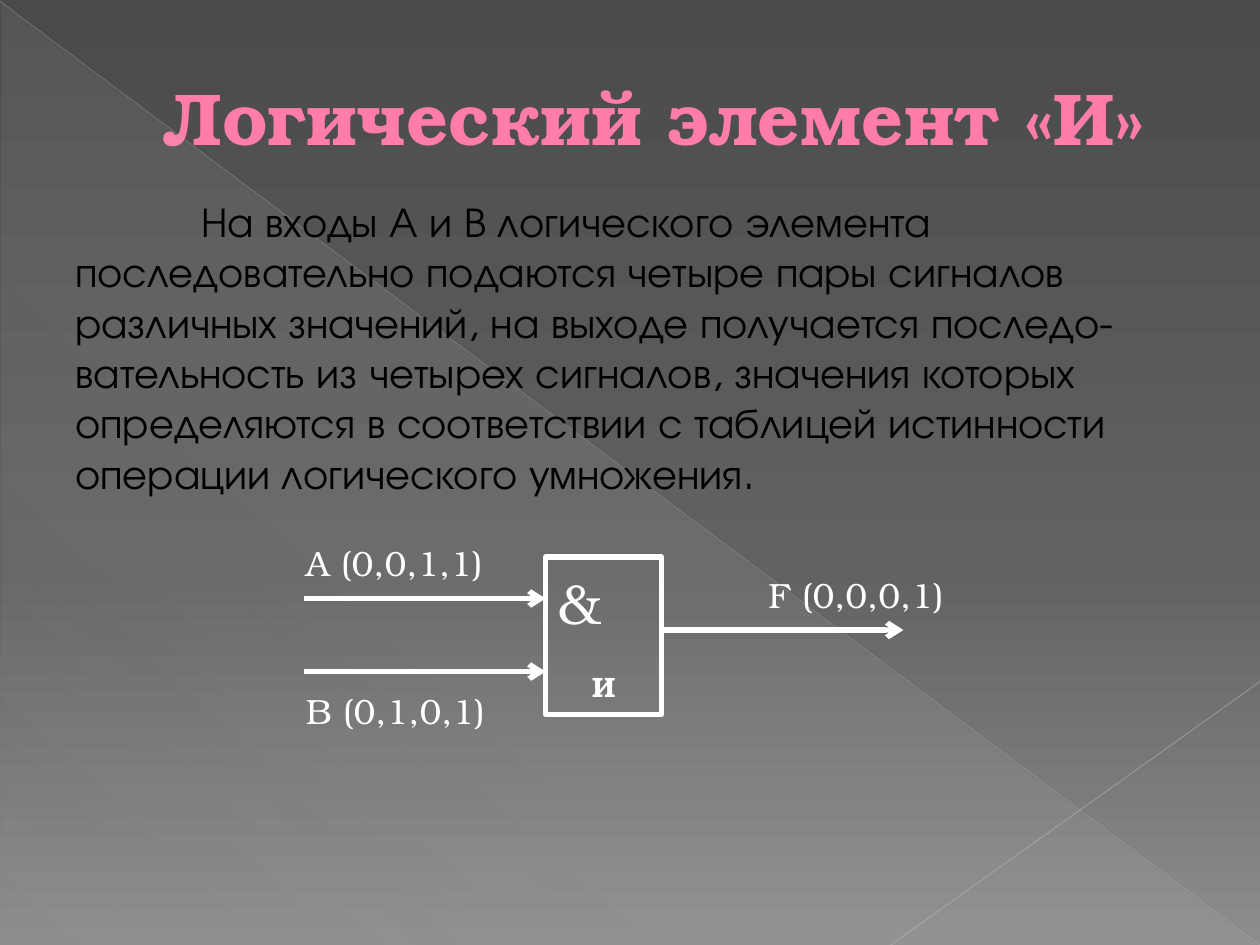
from pptx import Presentation
from pptx.dml.color import RGBColor
from pptx.enum.shapes import MSO_CONNECTOR, MSO_SHAPE
from pptx.enum.text import MSO_ANCHOR, PP_ALIGN
from pptx.oxml.ns import qn
from pptx.util import Inches, Pt
from lxml import etree

WHITE = RGBColor(0xFF, 0xFF, 0xFF)
BLACK = RGBColor(0, 0, 0)
PINK = RGBColor(0xFF, 0x7D, 0xA7)
CRIMSON = RGBColor(0xB1, 0x27, 0x61)
CHARCOAL = RGBColor(0x4A, 0x4A, 0x4A)
SLATE = RGBColor(0x62, 0x62, 0x62)
ASH = RGBColor(0x8C, 0x8C, 0x8C)
MIST = RGBColor(0xD2, 0xD2, 0xD2)
SILVER = RGBColor(0xBF, 0xBF, 0xBF)
PEARL = RGBColor(0xC6, 0xC6, 0xC6)

SERIF = "TeX Gyre Bonum"
SANS = "TeX Gyre Adventor"


def add_color(parent, color, opacity=100):
    clr = etree.SubElement(parent, qn("a:srgbClr"), val=str(color))
    if opacity < 100:
        etree.SubElement(clr, qn("a:alpha"), val=str(opacity * 1000))


def set_gradient(fill, element, angle, stops):
    fill.gradient()
    fill.gradient_angle = 360 - angle
    stop_list = element.find(".//" + qn("a:gsLst"))
    for old in list(stop_list):
        stop_list.remove(old)
    for position, color, opacity in stops:
        stop = etree.SubElement(stop_list, qn("a:gs"), pos=str(position * 1000))
        add_color(stop, color, opacity)


def add_run(paragraph, text, size, color, font=SERIF, bold=False):
    run = paragraph.add_run()
    run.text = text
    run.font.size = Pt(size)
    run.font.name = font
    run.font.bold = bold
    run.font.color.rgb = color
    return run


def add_line(slide, start, end, color, width, opacity=100, arrow=False):
    line = slide.shapes.add_connector(
        MSO_CONNECTOR.STRAIGHT, *(Inches(v) for v in (*start, *end)))
    line.line.color.rgb = color
    line.line.width = Pt(width)
    properties = line._element.spPr
    etree.SubElement(properties, qn("a:effectLst"))
    ln = properties.find(qn("a:ln"))
    if opacity < 100:
        solid = ln.find(qn("a:solidFill"))
        solid.remove(solid[0])
        add_color(solid, color, opacity)
    if arrow:
        etree.SubElement(ln, qn("a:tailEnd"), type="arrow")


def add_text(slide, left, top, width, height, text, size, color, font=SERIF):
    frame = slide.shapes.add_textbox(
        Inches(left), Inches(top), Inches(width), Inches(height)).text_frame
    frame.word_wrap = True
    add_run(frame.paragraphs[0], text, size, color, font)
    return frame


def add_backdrop(slide, width, height):
    set_gradient(slide.background.fill, slide._element, 90,
                 [(0, CHARCOAL, 100), (60, SLATE, 100), (100, ASH, 100)])
    triangle = slide.shapes.add_shape(
        MSO_SHAPE.RIGHT_TRIANGLE, Inches(0.01), Inches(0.02),
        Inches(width - 0.02), Inches(height - 0.02))
    triangle.shadow.inherit = False
    triangle.line.fill.background()
    set_gradient(triangle.fill, triangle._element, 133,
                 [(0, MIST, 10), (70, MIST, 8), (100, MIST, 1)])
    add_line(slide, (0, 0.01), (width, height), SILVER, 0.39, 35)
    add_line(slide, (width, 5.41), (7.07, height), PEARL, 0.47, 45)


def add_title(slide, left, top, width, height):
    title = slide.shapes.title
    title.left, title.top = Inches(left), Inches(top)
    title.width, title.height = Inches(width), Inches(height)
    frame = title.text_frame
    frame.vertical_anchor = MSO_ANCHOR.MIDDLE
    heading = frame.paragraphs[0]
    heading.alignment = PP_ALIGN.LEFT
    heading._p.get_or_add_pPr().set("marL", str(Inches(0.53)))
    run = add_run(heading, "Логический элемент «И»", 42, PINK, bold=True)
    outline = etree.Element(qn("a:ln"), w=str(Pt(0.5)))
    add_color(etree.SubElement(outline, qn("a:solidFill")), CRIMSON)
    run.font._element.insert(0, outline)


def add_explanation(slide, left, top, width, height):
    frame = add_text(
        slide, left, top, width, height,
        "На входы А и В логического элемента последовательно подаются "
        "четыре пары сигналов различных значений, на выходе получается "
        "последо-вательность из четырех сигналов, значения которых "
        "определяются в соответствии с таблицей истинности операции "
        "логического умножения.", 24, BLACK, SANS)
    frame.paragraphs[0]._p.get_or_add_pPr().set("indent", str(Inches(1)))


def add_and_gate(slide, left, top, width, height):
    gate = slide.shapes.add_shape(
        MSO_SHAPE.RECTANGLE, Inches(left), Inches(top), Inches(width), Inches(height))
    gate.shadow.inherit = False
    gate.fill.background()
    gate.line.color.rgb = WHITE
    gate.line.width = Pt(3)
    frame = gate.text_frame
    frame.vertical_anchor = MSO_ANCHOR.MIDDLE
    symbol = frame.paragraphs[0]
    symbol.alignment = PP_ALIGN.LEFT
    add_run(symbol, "&", 32, WHITE)
    name = frame.add_paragraph()
    name.alignment = PP_ALIGN.CENTER
    name.space_before = Pt(19)
    add_run(name, "И", 16, WHITE, bold=True)

    wire = 1.92
    right = left + width
    signals = [
        ("А (0,0,1,1)", left - wire, 0.33, left - 2, -0.17),
        ("В (0,1,0,1)", left - wire, 0.91, left - 2, 1),
        ("F (0,0,0,1)", right, 0.58, right + 0.75, 0.08),
    ]
    for label, wire_left, wire_drop, label_left, label_drop in signals:
        y = top + wire_drop
        add_line(slide, (wire_left, y), (wire_left + wire, y), WHITE, 3, arrow=True)
        add_text(slide, label_left, top + label_drop, wire, 0.44, label, 20, WHITE)


def main():
    deck = Presentation()
    deck.slide_width, deck.slide_height = Inches(10), Inches(7.5)
    slide = deck.slides.add_slide(deck.slide_layouts[5])
    add_backdrop(slide, 10, 7.5)
    add_title(slide, 0.67, 0.42, 9, 1)
    add_and_gate(slide, 4.33, 4.42, 0.92, 1.25)
    add_explanation(slide, 0.5, 1.5, 9.08, 2.52)
    deck.save("out.pptx")


if __name__ == "__main__":
    main()
